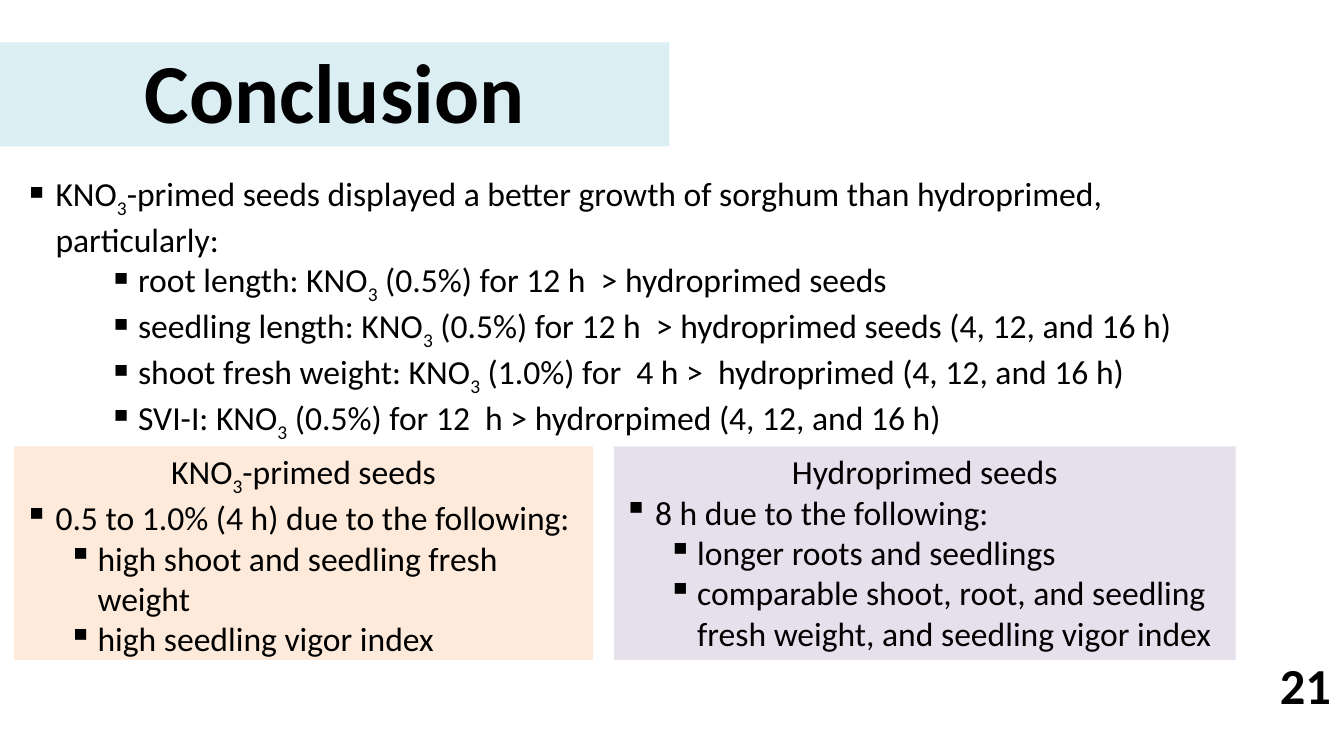
from lxml import etree
from pptx import Presentation
from pptx.dml.color import RGBColor
from pptx.enum.shapes import MSO_SHAPE as SHAPE
from pptx.enum.text import MSO_ANCHOR as ANCHOR, PP_ALIGN as ALIGN
from pptx.oxml.ns import qn
from pptx.util import Cm, Pt

COLORS = {"text": "000000", "title": "DBEEF4", "kno3": "FDEADA", "hydro": "E6E0EC"}
# Left margin and hanging indent of each bullet level, in cm
LEVELS = {"main": (0.79, 0.79), "sub": (1.85, 0.74), "deep": (2.87, 0.74)}


def add_box(left, top, width, height, fill=None):
    """Add a rectangle, or a text box without fill, and return its text frame."""
    place = Cm(left), Cm(top), Cm(width), Cm(height)
    if fill:
        sp = s.shapes.add_shape(SHAPE.RECTANGLE, *place)
        sp.shadow.inherit = False
        sp.fill.solid()
        sp.fill.fore_color.rgb = RGBColor.from_string(COLORS[fill])
        sp.line.fill.background()
    else:
        sp = s.shapes.add_textbox(*place)
    tf = sp.text_frame
    tf.word_wrap = True
    tf.vertical_anchor = ANCHOR.TOP
    return tf


def write(tf, lines, size=24, bold=False):
    """Write (level, text) lines; text between underscores is subscript."""
    for i, (level, text) in enumerate(lines):
        p = tf.add_paragraph() if i else tf.paragraphs[0]
        if level == "center":
            p.alignment = ALIGN.CENTER
        else:
            p.alignment = ALIGN.LEFT
            margin, hanging = LEVELS[level]
            pPr = p._p.get_or_add_pPr()
            pPr.set("marL", str(Cm(margin)))
            pPr.set("indent", str(-Cm(hanging)))
            etree.SubElement(pPr, qn("a:buChar")).set("char", "▪")
        for j, part in enumerate(text.split("_")):
            r = p.add_run()
            r.text = part
            r.font.name = "Calibri"
            r.font.size = Pt(size)
            r.font.bold = bold
            r.font.color.rgb = RGBColor.from_string(COLORS["text"])
            if j % 2:
                r._r.get_or_add_rPr().set("baseline", "-25000")


prs = Presentation()
prs.slide_width, prs.slide_height = Cm(33.87), Cm(19.05)
s = prs.slides.add_slide(prs.slide_layouts[6])

# Page number
write(add_box(31.65, 16.36, 2.49, 1.8), [("center", "21")], size=36, bold=True)

# Title band
tf = add_box(0, 1.07, 16.87, 2.62, "title")
tf.vertical_anchor = ANCHOR.BOTTOM
write(tf, [("center", "Conclusion")], size=60, bold=True)
tf.paragraphs[0].line_spacing = 0.9

# Main findings
write(add_box(0.36, 4.24, 31.24, 6.4), [
    ("main", "KNO_3_-primed seeds displayed a better growth of sorghum than hydroprimed, particularly:"),
    ("deep", "root length: KNO_3_ (0.5%) for 12 h  > hydroprimed seeds"),
    ("deep", "seedling length: KNO_3_ (0.5%) for 12 h  > hydroprimed seeds (4, 12, and 16 h)"),
    ("deep", "shoot fresh weight: KNO_3_ (1.0%) for  4 h >  hydroprimed (4, 12, and 16 h)"),
    ("deep", "SVI-I: KNO_3_ (0.5%) for 12  h > hydrorpimed (4, 12, and 16 h)"),
])

# Panels with the best treatment of each priming method
panels = [
    (0.36, 14.58, "kno3", [
        ("center", "KNO_3_-primed seeds"),
        ("main", "0.5 to 1.0% (4 h) due to the following:"),
        ("sub", "high shoot and seedling fresh weight"),
        ("sub", "high seedling vigor index"),
    ]),
    (15.47, 15.67, "hydro", [
        ("center", "Hydroprimed seeds"),
        ("main", "8 h due to the following:"),
        ("sub", "longer roots and seedlings"),
        ("sub", "comparable shoot, root, and seedling fresh weight, and seedling vigor index"),
    ]),
]
for left, width, fill, lines in panels:
    write(add_box(left, 11.25, width, 5.38, fill), lines)

prs.save("out.pptx")
